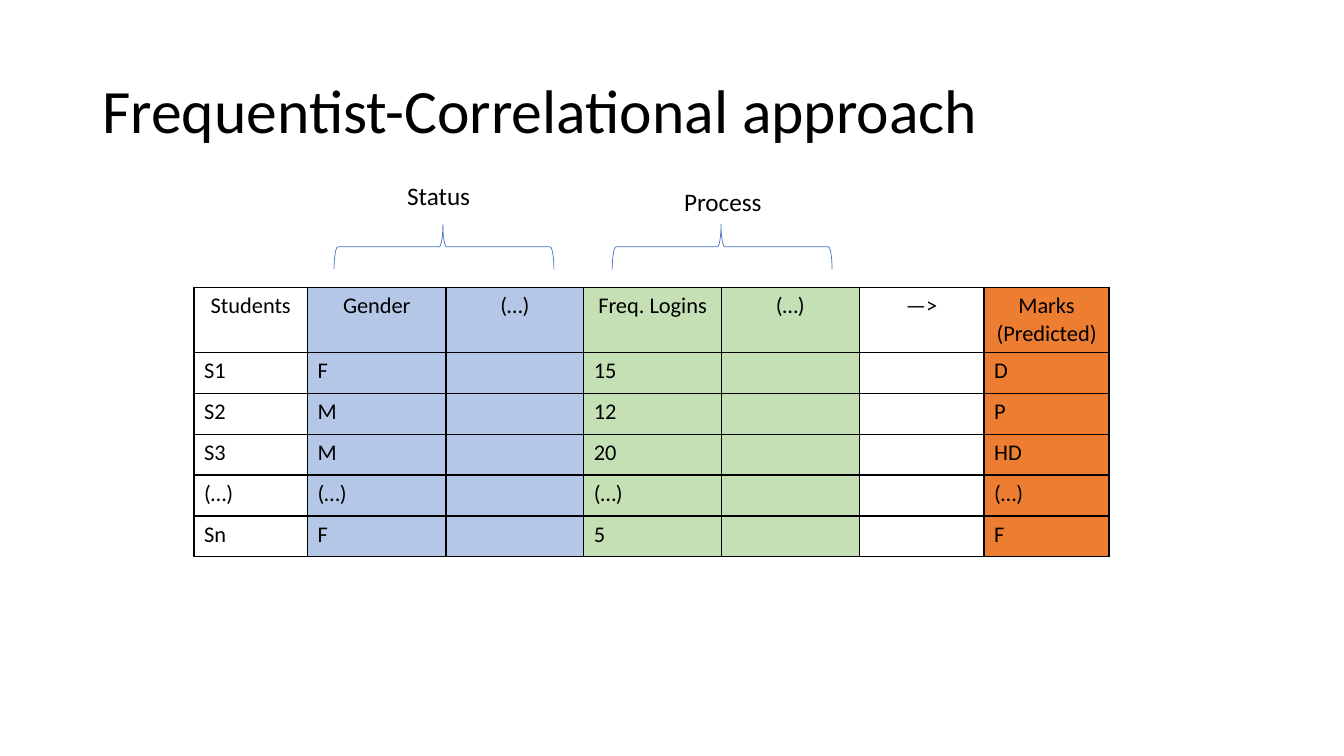
from dataclasses import dataclass

from lxml import etree
from pptx import Presentation
from pptx.dml.color import RGBColor
from pptx.enum.shapes import MSO_SHAPE
from pptx.enum.text import MSO_ANCHOR, PP_ALIGN
from pptx.oxml.ns import qn
from pptx.util import Cm, Pt

BRACE = MSO_SHAPE.RIGHT_BRACE
MIDDLE = MSO_ANCHOR.MIDDLE
LEFT, CENTER = PP_ALIGN.LEFT, PP_ALIGN.CENTER


@dataclass(frozen=True)
class Theme:
    face: str = "Calibri"
    ink: str = "000000"
    line: str = "4472C4"
    status: str = "B4C7E7"
    process: str = "C5E0B4"
    marks: str = "ED7D31"
    title: int = 44
    label: int = 18
    body: int = 16


theme = Theme()


def write(frame, text, size, align=LEFT):
    para = frame.paragraphs[0]
    para.text = text
    para.alignment = align
    para.font.name = theme.face
    para.font.size = Pt(size)
    para.font.color.rgb = RGBColor.from_string(theme.ink)
    return para


def frame_cell(cell):
    """Draw a thin line on all four sides of a table cell."""
    props = cell._tc.get_or_add_tcPr()
    for spot, side in enumerate(("a:lnL", "a:lnR", "a:lnT", "a:lnB")):
        edge = etree.Element(qn(side), w=str(Pt(1)))
        fill = etree.SubElement(edge, qn("a:solidFill"))
        etree.SubElement(fill, qn("a:srgbClr"), val=theme.ink)
        props.insert(spot, edge)


deck = Presentation()
deck.slide_width, deck.slide_height = Cm(33.87), Cm(19.05)
slide = deck.slides.add_slide(deck.slide_layouts[6])
shapes = slide.shapes

# Title
title = shapes.add_textbox(Cm(2.33), Cm(1.01), Cm(29.21), Cm(3.68)).text_frame
title.word_wrap = True
title.vertical_anchor = MIDDLE
write(title, "Frequentist-Correlational approach", theme.title).line_spacing = 0.9

# Student table
rows = [
    ("Students", "Gender", "(…)", "Freq. Logins", "(…)", "—>", "Marks (Predicted)"),
    ("S1", "F", "", "15", "", "", "D"),
    ("S2", "M", "", "12", "", "", "P"),
    ("S3", "M", "", "20", "", "", "HD"),
    ("(…)", "(…)", "", "(…)", "", "", "(…)"),
    ("Sn", "F", "", "5", "", "", "F"),
]
widths = [2.86, 3.49, 3.47, 3.47, 3.47, 3.15, 3.15]
fills = [None, theme.status, theme.status, theme.process, theme.process,
         None, theme.marks]
heights = [1.64] + [1.03] * (len(rows) - 1)

table = shapes.add_table(len(rows), len(widths), Cm(4.89), Cm(7.24),
                         Cm(sum(widths)), Cm(sum(heights))).table
table.first_row = table.horz_banding = False
for col, width in zip(table.columns, widths):
    col.width = Cm(width)
for r, (row, height) in enumerate(zip(rows, heights)):
    table.rows[r].height = Cm(height)
    for c, (text, fill) in enumerate(zip(row, fills)):
        cell = table.cell(r, c)
        write(cell.text_frame, text, theme.body, LEFT if r else CENTER)
        if fill:
            cell.fill.solid()
            cell.fill.fore_color.rgb = RGBColor.from_string(fill)
        else:
            cell.fill.background()
        frame_cell(cell)

# Braces and labels over the column groups
thick, span = 1.14, 5.54
groups = [
    ("Status", 11.19, 10.01, 4.42, 2.34),
    ("Process", 18.2, 16.99, 4.57, 2.49),
]
for text, mid, left, top, width in groups:
    brace = shapes.add_shape(BRACE, Cm(mid - thick / 2), Cm(3.45),
                             Cm(thick), Cm(span))
    brace.rotation = 270
    brace.adjustments[0] = 0.083
    brace.adjustments[1] = 0.495
    brace.shadow.inherit = False
    brace.fill.background()
    brace.line.color.rgb = RGBColor.from_string(theme.line)
    brace.line.width = Pt(0.5)

    label = shapes.add_textbox(Cm(left), Cm(top), Cm(width), Cm(1.02)).text_frame
    label.word_wrap = False
    write(label, text, theme.label)

deck.save("out.pptx")
